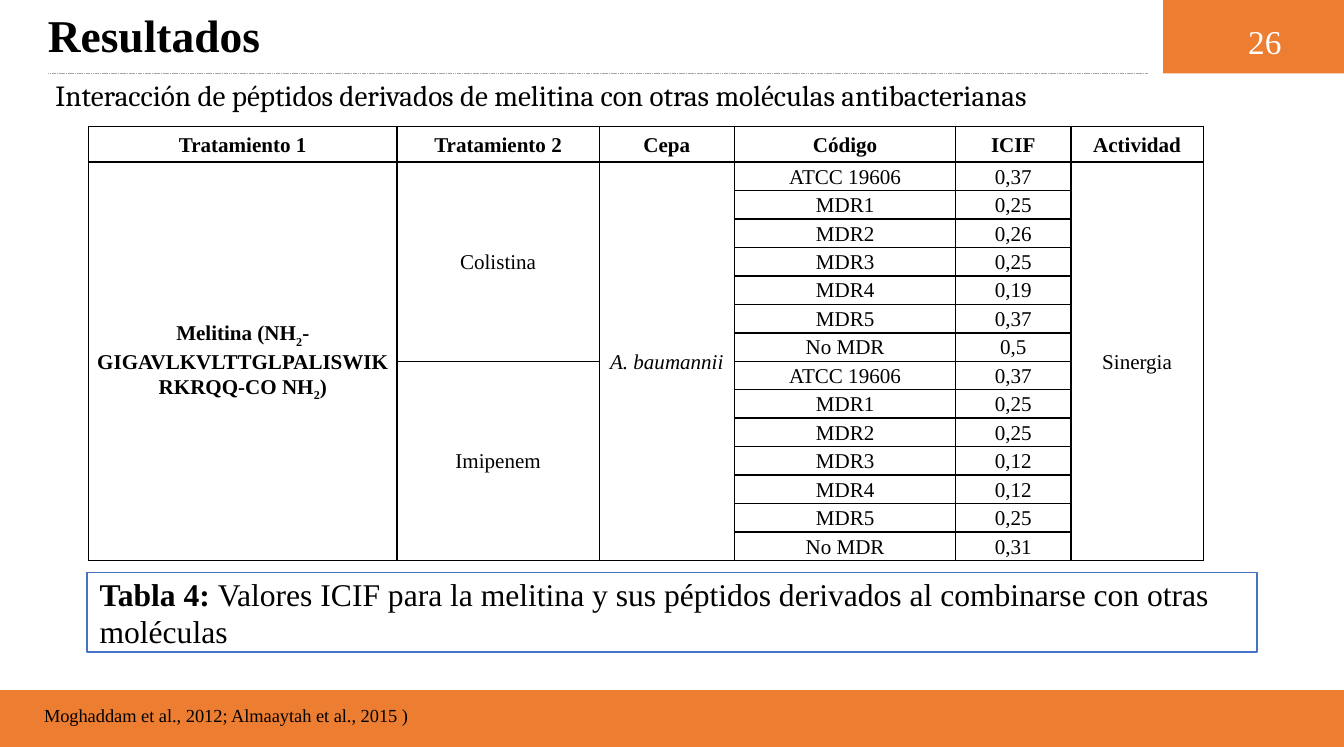
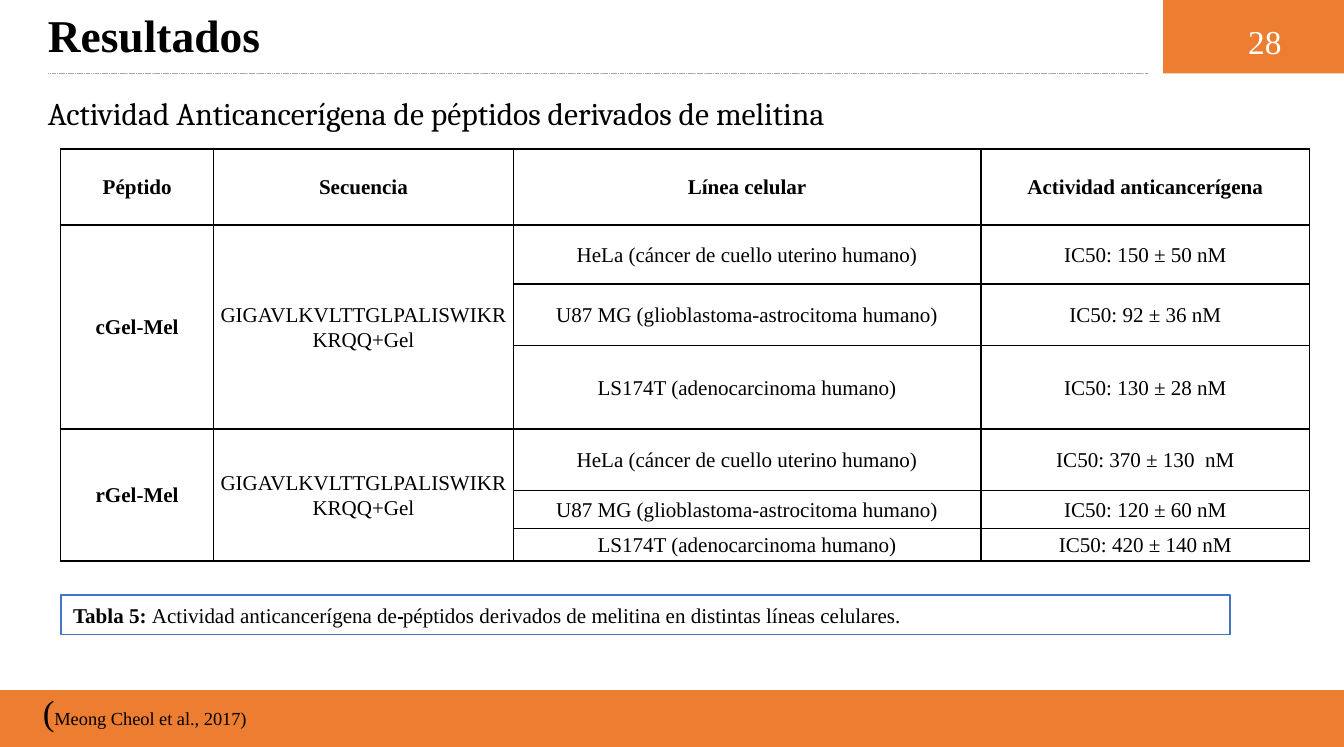
from lxml.etree import SubElement
from pptx import Presentation
from pptx.dml.color import RGBColor
from pptx.enum.dml import MSO_LINE
from pptx.enum.shapes import MSO_CONNECTOR, MSO_SHAPE
from pptx.enum.text import MSO_ANCHOR as Anchor, PP_ALIGN as Align
from pptx.oxml.ns import qn
from pptx.util import Inches, Pt

WIDTH, HEIGHT = Inches(10.63), Inches(5.91)
COLORS = {
    "text": "000000",
    "paper": "FFFFFF",
    "accent": "ED7D31",
    "rule": "A6A6A6",
    "frame": "4472C4",
}
SERIF, SUBTITLE_FONT = "Times New Roman", "Cambria"
BAND_HEIGHT = 9.81
FOOTER_TOP = 92.55

BOLD, ITALIC = {"bold": True}, {"italic": True}
SUBSCRIPT, STRUCK = {"baseline": "-25000"}, {"strike": "sngStrike"}


def color(name):
    return RGBColor.from_string(COLORS[name])


def area(left, top, width, height):
    """Turn percentages of the slide into lengths."""
    return (round(WIDTH * left / 100), round(HEIGHT * top / 100),
            round(WIDTH * width / 100), round(HEIGHT * height / 100))


def split(total, weights):
    return [round(total * weight / sum(weights)) for weight in weights]


def write(frame, content, size, font=SERIF, ink="text", bold=False,
          align=Align.LEFT, spacing=1.0):
    """Fill the first paragraph with a string or with (text, style) pairs."""
    paragraph = frame.paragraphs[0]
    paragraph.alignment = align
    paragraph.line_spacing = spacing
    paragraph.font.name = font
    paragraph.font.size = Pt(size)
    paragraph.font.bold = bold
    paragraph.font.color.rgb = color(ink)
    pieces = [(content, {})] if isinstance(content, str) else content
    for text, style in pieces:
        run = paragraph.add_run()
        run.text = text
        for key, value in style.items():
            if key in ("baseline", "strike"):
                run._r.get_or_add_rPr().set(key, value)
            else:
                setattr(run.font, key, value)


def add_text(slide, place, content, size, anchor=Anchor.TOP, **look):
    frame = slide.shapes.add_textbox(*area(*place)).text_frame
    frame.word_wrap = True
    frame.vertical_anchor = anchor
    write(frame, content, size, **look)


def add_panel(slide, place, fill, line=None):
    panel = slide.shapes.add_shape(MSO_SHAPE.RECTANGLE, *area(*place))
    panel.shadow.inherit = False
    panel.fill.solid()
    panel.fill.fore_color.rgb = color(fill)
    if line:
        panel.line.color.rgb = color(line)
        panel.line.width = Pt(1)
    else:
        panel.line.fill.background()
    return panel


def add_caption(slide, place, content, size):
    frame = add_panel(slide, place, "paper", "frame").text_frame
    frame.word_wrap = True
    frame.vertical_anchor = Anchor.MIDDLE
    write(frame, content, size)


def add_header_rule(slide):
    left, top, width, _ = area(3.57, BAND_HEIGHT, 81.85, 0)
    rule = slide.shapes.add_connector(
        MSO_CONNECTOR.STRAIGHT, left, top, left + width, top)
    rule.line.color.rgb = color("rule")
    rule.line.width = Pt(0.25)
    rule.line.dash_style = MSO_LINE.SQUARE_DOT
    SubElement(rule._element.spPr, qn("a:effectLst"))


def add_results_slide(deck, number):
    """Add a slide with the shared title, number band and footer band."""
    slide = deck.slides.add_slide(deck.slide_layouts[6])
    add_header_rule(slide)
    add_panel(slide, (86.55, 0, 13.45, BAND_HEIGHT), "accent")
    add_panel(slide, (0, FOOTER_TOP, 100, 100 - FOOTER_TOP), "accent", "accent")
    add_text(slide, (2.63, 1.52, 79.87, 7.61), "Resultados", 25.9,
             Anchor.MIDDLE, bold=True, spacing=0.8)
    add_text(slide, (91.53, 2.03, 5.17, 7.11), str(number), 19,
             ink="paper", align=Align.CENTER)
    return slide


def add_subtitle(slide, left, top, text, size):
    add_text(slide, (left, top, 79.87, 7.61), text, size, Anchor.MIDDLE,
             font=SUBTITLE_FONT, spacing=0.9)


def draw_borders(cell):
    properties = cell._tc.get_or_add_tcPr()
    for side in ("lnL", "lnR", "lnT", "lnB"):
        border = SubElement(properties, qn(f"a:{side}"), w=str(Pt(1)))
        fill = SubElement(border, qn("a:solidFill"))
        SubElement(fill, qn("a:srgbClr"), val=COLORS["text"])


def merge_down(table, rows):
    """Join every cell with the None entries below it."""
    for c in range(len(rows[0])):
        starts = [r for r, row in enumerate(rows) if row[c] is not None]
        for start, end in zip(starts, starts[1:] + [len(rows)]):
            if end - start > 1:
                table.cell(start, c).merge(table.cell(end - 1, c))


def add_grid(slide, place, widths, heights, rows, side_margin):
    """Add a ruled table with a bold first row and first column."""
    spot = area(*place)
    table = slide.shapes.add_table(len(rows), len(widths), *spot).table
    table.first_row = table.horz_banding = False
    for column, width in zip(table.columns, split(spot[2], widths)):
        column.width = width
    for row, height in zip(table.rows, split(spot[3], heights)):
        row.height = height
    for r, row in enumerate(rows):
        for c, content in enumerate(row):
            cell = table.cell(r, c)
            cell.margin_left = cell.margin_right = Inches(side_margin)
            cell.margin_top = cell.margin_bottom = 0
            cell.vertical_anchor = Anchor.MIDDLE
            draw_borders(cell)
            cell.fill.solid()
            cell.fill.fore_color.rgb = color("paper")
            write(cell.text_frame, content or [], 12, bold=r == 0 or c == 0,
                  align=Align.CENTER, spacing=1.07)
    merge_down(table, rows)


def synergy_rows():
    strains = ["ATCC 19606", "MDR1", "MDR2", "MDR3", "MDR4", "MDR5", "No MDR"]
    indices = {
        "Colistina": ["0,37", "0,25", "0,26", "0,25", "0,19", "0,37", "0,5"],
        "Imipenem": ["0,37", "0,25", "0,25", "0,12", "0,12", "0,25", "0,31"],
    }
    rows = [["Tratamiento 1", "Tratamiento 2", "Cepa", "Código", "ICIF",
             "Actividad"]]
    for drug, values in indices.items():
        for strain, value in zip(strains, values):
            rows.append([None, None, None, strain, value, None])
        rows[-len(strains)][1] = drug
    melittin = [("Melitina (NH", {}), ("2", SUBSCRIPT),
                ("-GIGAVLKVLTTGLPALISWIKRKRQQ-CO NH", {}),
                ("2", SUBSCRIPT), (")", {})]
    rows[1][0] = melittin
    rows[1][2] = [("A. baumannii", ITALIC)]
    rows[1][5] = "Sinergia"
    return rows


def anticancer_rows():
    cell_lines = ["HeLa (cáncer de cuello uterino humano)",
                  "U87 MG (glioblastoma-astrocitoma humano)",
                  "LS174T (adenocarcinoma humano)"]
    doses = {
        "cGel-Mel": ["150 ± 50 nM", "92 ± 36 nM", "130 ± 28 nM"],
        "rGel-Mel": ["370 ± 130  nM", "120 ± 60 nM", "420 ± 140 nM"],
    }
    rows = [["Péptido", "Secuencia", "Línea celular",
             "Actividad anticancerígena"]]
    for peptide, values in doses.items():
        for cell_line, dose in zip(cell_lines, values):
            rows.append([None, None, cell_line, f"IC50: {dose}"])
        rows[-len(cell_lines)][:2] = [peptide, "GIGAVLKVLTTGLPALISWIKRKRQQ+Gel"]
    return rows


def build_synergy(deck):
    slide = add_results_slide(deck, 26)
    add_subtitle(slide, 3.2, 9.14, "Interacción de péptidos derivados de "
                 "melitina con otras moléculas antibacterianas", 16.6)
    add_caption(slide, (6.49, 76.65, 87.02, 10.66), [
        ("Tabla 4: ", BOLD),
        ("Valores ICIF para la melitina y sus péptidos derivados al "
         "combinarse con otras moléculas", {})], 18)
    add_grid(slide, (6.59, 16.92, 82.97, 58.21),
             [2.44, 1.6, 1.07, 1.75, 0.91, 1.05], [1.25] + [1] * 14,
             synergy_rows(), 0.05)
    add_text(slide, (2.35, 93.4, 50.14, 4.74),
             "Moghaddam et al., 2012; Almaaytah et al., 2015 )", 10.5)


def build_anticancer(deck):
    slide = add_results_slide(deck, 28)
    add_subtitle(slide, 2.63, 11.68, "Actividad Anticancerígena de péptidos "
                 "derivados de melitina", 18)
    add_grid(slide, (4.52, 19.97, 92.94, 55.16), [1.21, 2.37, 3.7, 2.6],
             [0.6, 0.47, 0.49, 0.66, 0.49, 0.3, 0.26], anticancer_rows(), 0.02)
    add_caption(slide, (4.52, 79.7, 87.02, 5.25), [
        ("Tabla 5: ", BOLD), ("Actividad anticancerígena de", {}),
        (" ", STRUCK),
        ("péptidos derivados de melitina en distintas líneas celulares.", {}),
    ], 12)
    add_text(slide, (2.26, 91.54, 58.8, 7.45),
             [("(", {"size": Pt(20)}), ("Meong Cheol et al., 2017)", {})], 10.5)


def main():
    deck = Presentation()
    deck.slide_width, deck.slide_height = WIDTH, HEIGHT
    build_synergy(deck)
    build_anticancer(deck)
    deck.save("out.pptx")


if __name__ == "__main__":
    main()
